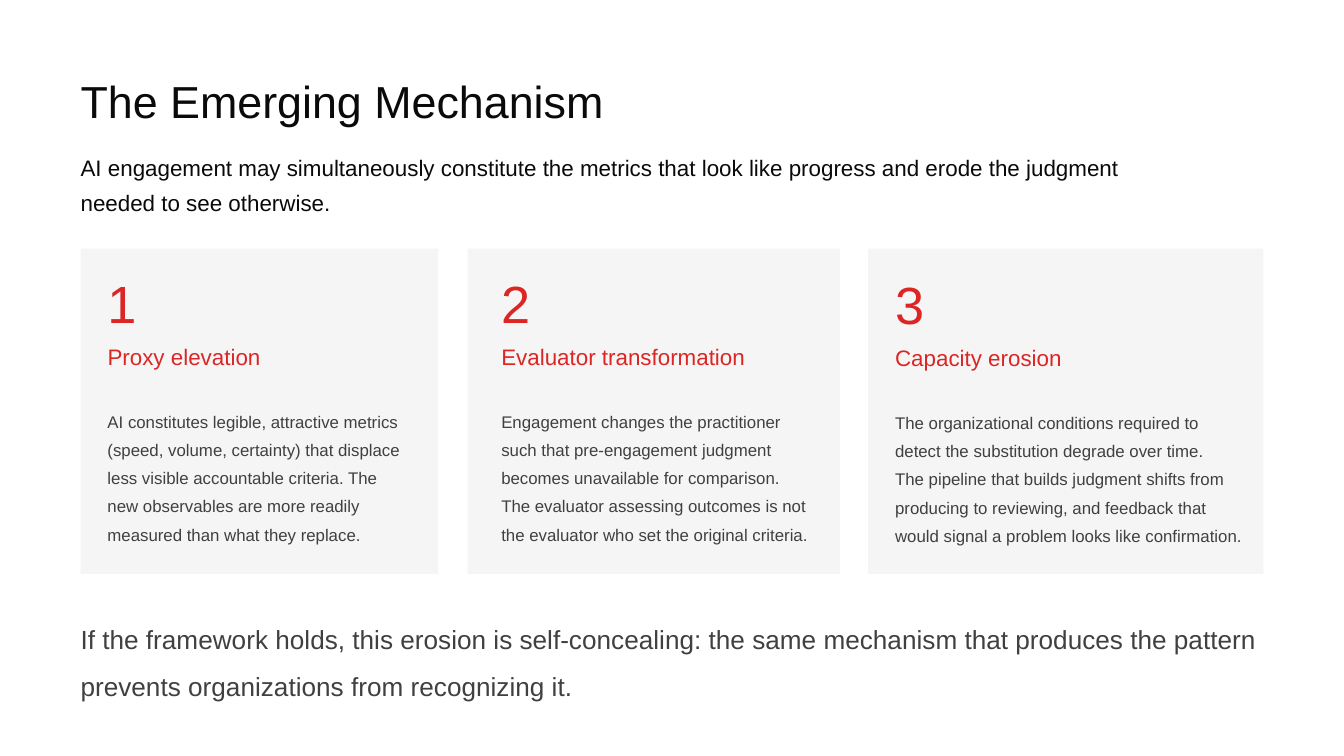
from pptx import Presentation
from pptx.dml.color import RGBColor
from pptx.enum import shapes, text
from pptx.util import Inches, Pt

INK, RED, GRAY, PANEL = "0A0A0A", "DC2525", "404040", "F5F5F5"


def color(value):
    return RGBColor.from_string(value)


def write(words, left, top, width, height, size, ink, spacing=None, middle=True, holder=None):
    box = holder or slide.shapes.add_textbox(0, 0, 0, 0)
    box.left, box.top = Inches(left), Inches(top)
    box.width, box.height = Inches(width), Inches(height)
    frame = box.text_frame
    frame.text = words
    frame.word_wrap = True
    frame.auto_size = text.MSO_AUTO_SIZE.NONE
    frame.margin_left = frame.margin_top = frame.margin_right = frame.margin_bottom = 0
    frame.vertical_anchor = text.MSO_ANCHOR.MIDDLE if middle else text.MSO_ANCHOR.TOP
    for paragraph in frame.paragraphs:
        paragraph.alignment = text.PP_ALIGN.LEFT
        paragraph.space_before = Pt(0)
        paragraph.line_spacing = spacing or 1.0
        for run in paragraph.runs:
            run.font.name = "Arial"
            run.font.size = Pt(size)
            run.font.color.rgb = color(ink)


deck = Presentation()
deck.slide_width = Inches(10)
deck.slide_height = Inches(10 * 9 / 16)
slide = deck.slides.add_slide(deck.slide_layouts[5])
slide.background.fill.solid()
slide.background.fill.fore_color.rgb = color("FFFFFF")

write("The Emerging Mechanism", 0.6, 0.5, 8.8, 0.5, 24, INK, holder=slide.shapes.title)
write("AI engagement may simultaneously constitute the metrics that look like progress "
      "and erode the judgment needed to see otherwise.",
      0.6, 1.1, 8, 0.5, 12, INK, spacing=1.3)

stages = [
    (0.6, 2.66, 0.8, 2, 2.2, "Proxy elevation",
     "AI constitutes legible, attractive metrics (speed, volume, certainty) that displace "
     "less visible accountable criteria. The new observables are more readily measured "
     "than what they replace."),
    (3.48, 2.77, 3.73, 2, 2.35, "Evaluator transformation",
     "Engagement changes the practitioner such that pre-engagement judgment becomes "
     "unavailable for comparison.\n"
     "The evaluator assessing outcomes is not the evaluator who set the original criteria."),
    (6.46, 2.94, 6.66, 2.01, 2.59, "Capacity erosion",
     "The organizational conditions required to detect the substitution degrade over time.\n"
     "The pipeline that builds judgment shifts from producing to reviewing, and feedback "
     "that would signal a problem looks like confirmation."),
]
for number, (left, width, inner, top, measure, heading, detail) in enumerate(stages, 1):
    panel = slide.shapes.add_shape(shapes.MSO_SHAPE.RECTANGLE, Inches(left), Inches(1.85),
                                   Inches(width), Inches(2.42))
    panel.shadow.inherit = False
    panel.fill.solid()
    panel.fill.fore_color.rgb = color(PANEL)
    panel.line.fill.background()
    write(str(number), inner, top, 0.8, 0.5, 28, RED)
    write(heading, inner, top + 0.5, 2.35, 0.3, 12, RED)
    write(detail, inner, top + 1, measure, 1.41, 9, GRAY, spacing=1.4, middle=False)

write("If the framework holds, this erosion is self-concealing: the same mechanism that "
      "produces the pattern prevents organizations from recognizing it.",
      0.6, 4.52, 8.8, 0.65, 14, GRAY, spacing=1.5, middle=False)

deck.save("out.pptx")
